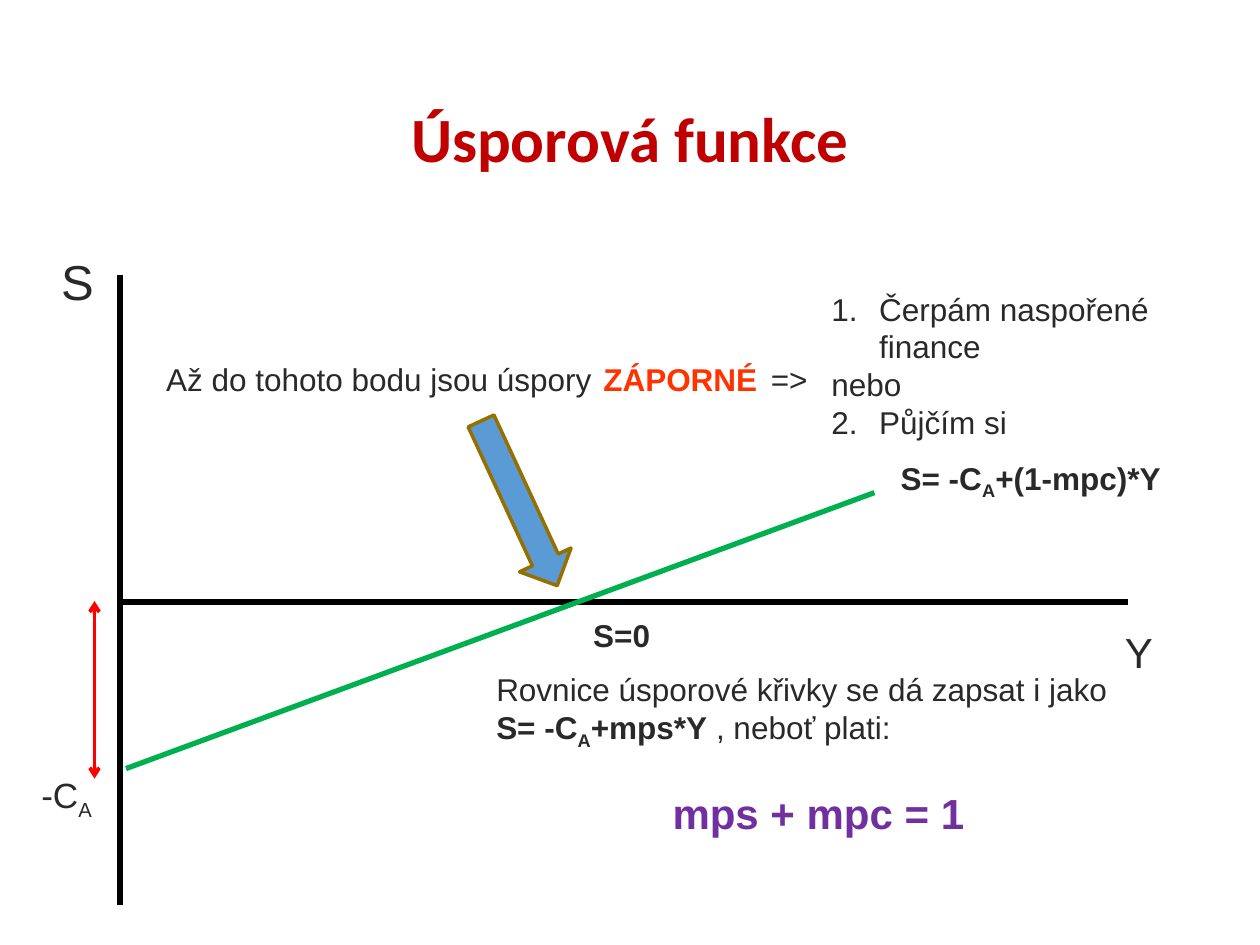
from lxml import etree
from pptx import Presentation
from pptx.dml.color import RGBColor
from pptx.enum.shapes import MSO_CONNECTOR, MSO_SHAPE
from pptx.enum.text import MSO_ANCHOR, PP_ALIGN
from pptx.oxml.ns import qn
from pptx.util import Inches, Pt

STRAIGHT = MSO_CONNECTOR.STRAIGHT
ARROW = MSO_SHAPE.RIGHT_ARROW
MIDDLE = MSO_ANCHOR.MIDDLE
CENTER = PP_ALIGN.CENTER
COLS, ROWS = 100, 75
INK, RED = "292929", "FF0000"
BOLD = {"bold": True}
SUB = {"sub": True}
BOLD_SUB = {"bold": True, "sub": True}


def rgb(code):
    return RGBColor.from_string(code)


class Board:
    """Holds the style and the current slide, measured on a 100 by 75 grid."""

    def __init__(self):
        self.deck = Presentation()
        self.deck.slide_width = Inches(10)
        self.deck.slide_height = Inches(7.5)
        self.slide = self.deck.slides.add_slide(self.deck.slide_layouts[5])
        self.shapes = self.slide.shapes
        self.font = "Arial"

    def place(self, col, row, wide=0, high=0):
        dx = self.deck.slide_width / COLS
        dy = self.deck.slide_height / ROWS
        return [round(n) for n in (col * dx, row * dy, wide * dx, high * dy)]

    def run(self, para, text, size, color=INK, bold=False, sub=False, font=None):
        run = para.add_run()
        run.text = text
        run.font.size = Pt(size)
        run.font.bold = bold
        run.font.name = font or self.font
        run.font.color.rgb = rgb(color)
        if sub:
            run.font._element.set("baseline", "-25000")

    def title(self, text, box):
        shape = self.shapes.title
        shape.left, shape.top, shape.width, shape.height = self.place(*box)
        frame = shape.text_frame
        frame.vertical_anchor = MIDDLE
        para = frame.paragraphs[0]
        para.alignment = CENTER
        para.line_spacing = 0.9
        self.run(para, text, 36, "C00000", True, font="Calibri")

    def text(self, box, size, *runs):
        frame = self.shapes.add_textbox(*self.place(*box)).text_frame
        frame.word_wrap = True
        for text, style in runs:
            self.run(frame.paragraphs[0], text, size, **style)
        return frame

    def steps(self, box, size, items):
        frame = self.text(box, size)
        for index, (text, start) in enumerate(items):
            para = frame.add_paragraph() if index else frame.paragraphs[0]
            props = para._p.get_or_add_pPr()
            props.set("marL", str(Inches(0.38)))
            props.set("indent", str(-Inches(0.38)))
            if start:
                mark = etree.SubElement(props, qn("a:buAutoNum"), type="arabicPeriod")
                mark.set("startAt", str(start))
            else:
                etree.SubElement(props, qn("a:buNone"))
            self.run(para, text, size)

    def line(self, start, end, color, width, heads=False):
        ends = self.place(*start)[:2] + self.place(*end)[:2]
        line = self.shapes.add_connector(STRAIGHT, *ends)
        line.line.color.rgb = rgb(color)
        line.line.width = Pt(width)
        props = line._element.spPr
        etree.SubElement(props, qn("a:effectLst"))
        if heads:
            for tag in ("a:headEnd", "a:tailEnd"):
                etree.SubElement(props.find(qn("a:ln")), qn(tag), type="arrow")

    def arrow(self, box, turn, fill, edge):
        shape = self.shapes.add_shape(ARROW, *self.place(*box))
        shape.shadow.inherit = False
        shape.rotation = turn
        shape.fill.solid()
        shape.fill.fore_color.rgb = rgb(fill)
        shape.line.color.rgb = rgb(edge)
        shape.line.width = Pt(2)


def main():
    board = Board()
    board.title("Úsporová funkce", (6.9, 4, 86.2, 14.5))

    board.line((9.5, 21.8), (9.5, 71.8), "000000", 3.5)
    board.line((9.8, 47.75), (89.5, 47.75), "000000", 3.5)
    board.text((88.3, 49.2, 8.6, 5.1), 24, ("Y", {}))
    board.text((3.9, 19.5, 9.4, 5.7), 28, ("S", {}))

    board.line((10, 61), (69.4, 39.1), "00B050", 3)
    board.text((70.5, 35.9, 29, 7), 18,
               ("S= -C", BOLD), ("A", BOLD_SUB), ("+(1-mpc)*Y", BOLD))
    board.line((7.5, 47.7), (7.5, 61.8), RED, 2, heads=True)
    board.text((2.3, 60.9, 7, 4.4), 20, ("-C", {}), ("A", SUB))

    board.arrow((34, 37.7, 14.4, 4.5), 65.2, "5B9BD5", "956F00")
    board.text((12.2, 28.1, 37, 4), 18, ("Až do tohoto bodu jsou úspory", {}))
    board.text((46.1, 48.4, 7, 4), 18, ("S=0", BOLD))

    note = board.text((38.4, 52.7, 53.1, 17.2), 18,
                      ("Rovnice úsporové křivky se dá zapsat i jako ", {}),
                      ("S= -C", BOLD), ("A", BOLD_SUB), ("+mps*Y", BOLD),
                      (" , neboť plati:", {}))
    para = note.add_paragraph()
    para.alignment = CENTER
    para.space_before = Pt(21)
    board.run(para, "mps + mpc = 1", 24, "7030A0", True)

    board.text((46.9, 28.1, 14.9, 4), 18,
               ("ZÁPORNÉ", {"color": "FF3300", "bold": True}))
    board.text((60.2, 28.1, 6.3, 4), 18, ("=>", {}))
    board.steps((65, 22.5, 30.7, 13), 18,
                [("Čerpám naspořené finance", 1), ("nebo", None), ("Půjčím si", 2)])

    board.deck.save("out.pptx")


if __name__ == "__main__":
    main()
